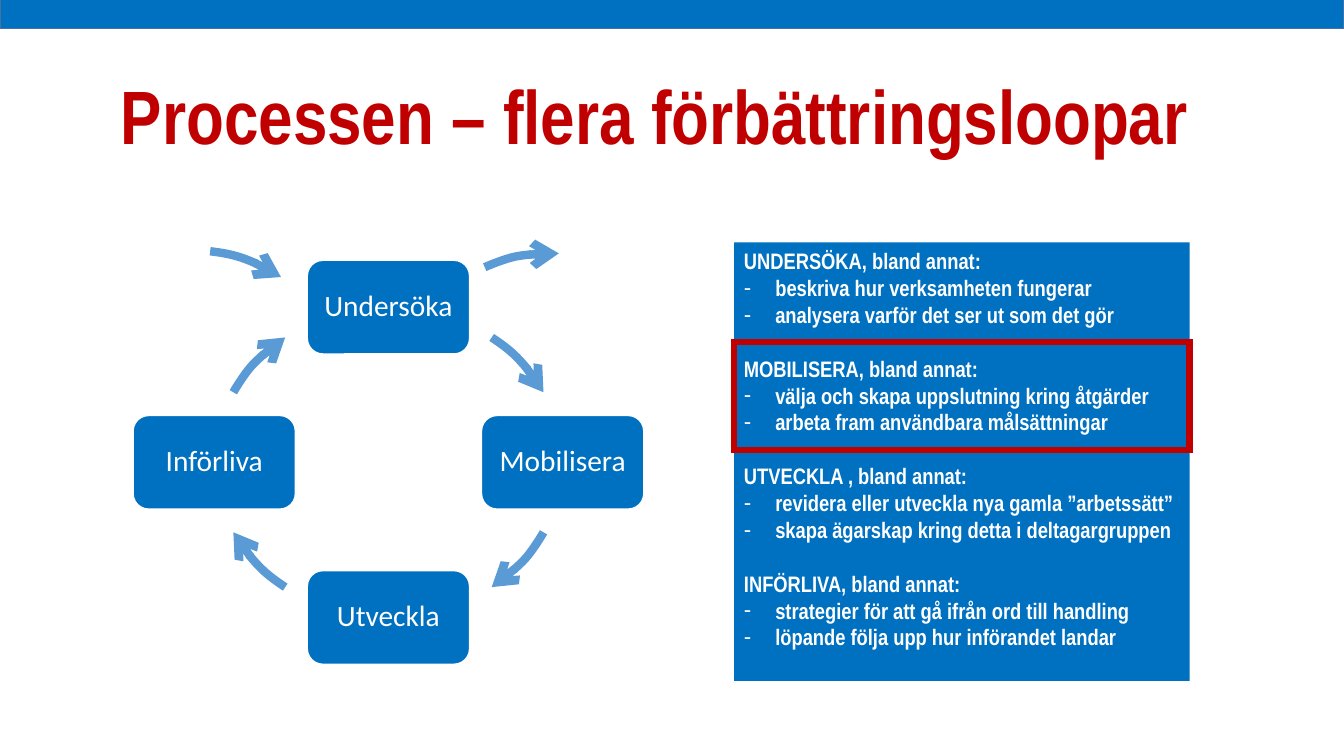
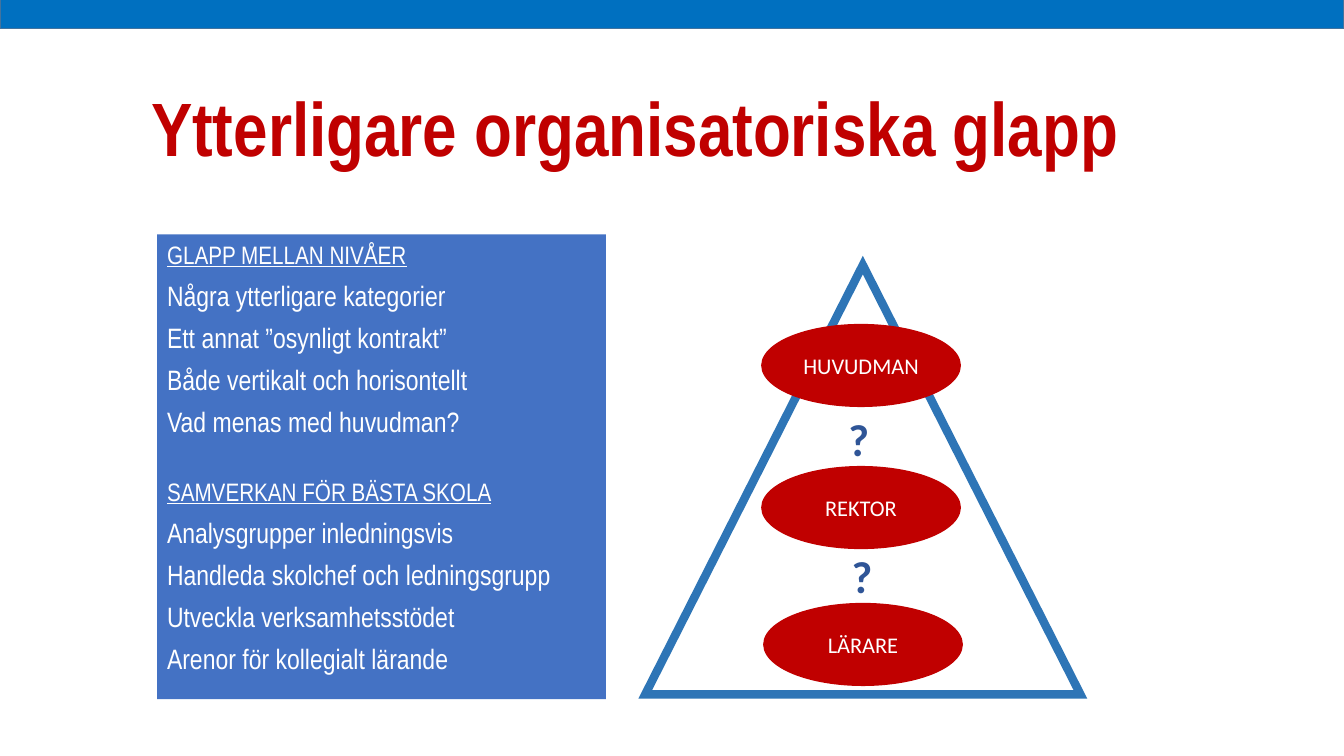
from lxml import etree
from pptx import Presentation
from pptx import util as u
from pptx.dml.color import RGBColor
from pptx.enum import shapes, text
from pptx.oxml.ns import qn

BLUE = RGBColor(0x00, 0x70, 0xC0)
BAND_EDGE = RGBColor(0x43, 0x73, 0x9E)
PANEL_BLUE = RGBColor(0x44, 0x72, 0xC4)
ARROW_BLUE = RGBColor(0x5B, 0x9B, 0xD5)
TRIANGLE_BLUE = RGBColor(0x2E, 0x75, 0xB6)
QUESTION_BLUE = RGBColor(0x2F, 0x55, 0x97)
RED = RGBColor(0xC0, 0x00, 0x00)
WHITE = RGBColor(0xFF, 0xFF, 0xFF)

Shape = shapes.MSO_SHAPE
WIDTH, HEIGHT = 33.87, 19.05
BAND = (0, -0.25, WIDTH, 0.97)
CYCLE_CENTRE = (9.79, 11.65)
NODE_SIZE = (4.09, 2.36)
NODE_STEP = (4.39, 3.91)
RING_SIZE = (8.76, 7.82)
ROLE_SIZE = (5, 2.06)

TITLE = {"name": "Arial Narrow", "size": u.Pt(54), "bold": True}
PHASE = {"name": "Arial Narrow", "size": u.Pt(16), "bold": True}
HEADING = {"name": "Arial Narrow", "size": u.Pt(18), "underline": True}
BODY = {"name": "Arial Narrow", "size": u.Pt(20)}
NODE = {"name": "Calibri", "size": u.Pt(21)}
ROLE = {"name": "Calibri", "size": u.Pt(16)}
QUESTION = {"name": "Calibri", "size": u.Pt(32), "bold": True}

PHASES = [
    ("UNDERSÖKA, bland annat:",
     ["beskriva hur verksamheten fungerar",
      "analysera varför det ser ut som det gör"]),
    ("MOBILISERA, bland annat:",
     ["välja och skapa uppslutning kring åtgärder",
      "arbeta fram användbara målsättningar"]),
    ("UTVECKLA , bland annat:",
     ["revidera eller utveckla nya gamla ”arbetssätt”",
      "skapa ägarskap kring detta i deltagargruppen"]),
    ("INFÖRLIVA, bland annat:",
     ["strategier för att gå ifrån ord till handling",
      "löpande följa upp hur införandet landar"]),
]
GAPS = [
    ("GLAPP MELLAN NIVÅER",
     ["Några ytterligare kategorier",
      "Ett annat ”osynligt kontrakt”",
      "Både vertikalt och horisontellt",
      "Vad menas med huvudman?"]),
    ("SAMVERKAN FÖR BÄSTA SKOLA",
     ["Analysgrupper inledningsvis",
      "Handleda skolchef och ledningsgrupp",
      "Utveckla verksamhetsstödet",
      "Arenor för kollegialt lärande"]),
]
NODES = [("Undersöka", 0, -1), ("Mobilisera", 1, 0),
         ("Utveckla", 0, 1), ("Införliva", -1, 0)]
UPPER_RIGHT, LOWER_RIGHT = (309.6, 335.7), (24.3, 50.4)
LOWER_LEFT, UPPER_LEFT = (129.6, 155.7), (204.3, 230.4)


def set_all(target, values):
    for name, value in values.items():
        setattr(target, name, value)


def write(paragraph, words, font, color, **layout):
    run = paragraph.add_run()
    run.text = words
    set_all(run.font, font)
    run.font.color.rgb = color
    set_all(paragraph, layout)


def paint(figure, fill=None, line=None, weight=1):
    figure.shadow.inherit = False
    if fill is None:
        figure.fill.background()
    else:
        figure.fill.solid()
        figure.fill.fore_color.rgb = fill
    if line is None:
        figure.line.fill.background()
    else:
        figure.line.color.rgb = line
        figure.line.width = u.Pt(weight)
        add_line_part(figure, "a:miter", "lim", "800000")


def add_line_part(figure, tag, name, value):
    outline = figure._element.spPr.find(qn("a:ln"))
    etree.SubElement(outline, qn(tag)).set(name, value)


def add_figure(slide, kind, box, **look):
    figure = slide.shapes.add_shape(kind, *map(u.Cm, box))
    paint(figure, **look)
    return figure


def add_label(figure, words, font, **layout):
    frame = figure.text_frame
    set_all(frame, {"word_wrap": True, "vertical_anchor": text.MSO_ANCHOR.MIDDLE})
    write(frame.paragraphs[0], words, font, WHITE,
          alignment=text.PP_ALIGN.CENTER, **layout)


def add_words(slide, words, box, font, color, wrap):
    frame = slide.shapes.add_textbox(*map(u.Cm, box)).text_frame
    frame.word_wrap = wrap
    write(frame.paragraphs[0], words, font, color)


def add_dash(paragraph):
    properties = paragraph._p.get_or_add_pPr()
    indent = u.Cm(0.79)
    properties.set("marL", str(indent))
    properties.set("indent", str(-indent))
    etree.SubElement(properties, qn("a:buFont")).set("typeface", "Arial")
    etree.SubElement(properties, qn("a:buChar")).set("char", "-")


def add_panel(slide, box, fill, groups, heading, body, spacing, group_gap, dashed):
    frame = add_figure(slide, Shape.RECTANGLE, box, fill=fill).text_frame
    set_all(frame, {"word_wrap": True, "vertical_anchor": text.MSO_ANCHOR.TOP})
    for number, (topic, points) in enumerate(groups):
        first = number == 0
        paragraph = frame.paragraphs[0] if first else frame.add_paragraph()
        write(paragraph, topic, heading, WHITE, alignment=text.PP_ALIGN.LEFT,
              space_before=u.Pt(0 if first else group_gap))
        for point in points:
            paragraph = frame.add_paragraph()
            write(paragraph, point, body, WHITE, alignment=text.PP_ALIGN.LEFT,
                  space_before=u.Pt(spacing))
            if dashed:
                add_dash(paragraph)


def add_curved_arrow(slide, left, top, angles, rotation=0):
    arrow = add_figure(slide, Shape.ARC, (left, top, *RING_SIZE),
                       line=ARROW_BLUE, weight=6)
    arrow.rotation = rotation
    for index, degrees in enumerate(angles):
        arrow.adjustments[index] = degrees * 0.6
    add_line_part(arrow, "a:tailEnd", "type", "arrow")


def add_cycle(slide):
    cx, cy = CYCLE_CENTRE
    width, height = NODE_SIZE
    for words, column, row in NODES:
        box = (cx + column * NODE_STEP[0] - width / 2,
               cy + row * NODE_STEP[1] - height / 2, width, height)
        node = add_figure(slide, Shape.ROUNDED_RECTANGLE, box, fill=BLUE, line=WHITE)
        for side in ("left", "top", "right", "bottom"):
            setattr(node.text_frame, f"margin_{side}", u.Cm(0.1))
        add_label(node, words, NODE, line_spacing=0.9)
    for angles in (UPPER_RIGHT, LOWER_RIGHT, LOWER_LEFT, UPPER_LEFT):
        add_curved_arrow(slide, cx - RING_SIZE[0] / 2, cy - RING_SIZE[1] / 2, angles)
    add_curved_arrow(slide, 9.96, 6.55, UPPER_LEFT, 36)
    add_curved_arrow(slide, 0, 6.4, UPPER_RIGHT, 333.4)


def add_slide(deck, title, left, top):
    slide = deck.slides.add_slide(deck.slide_layouts[6])
    add_figure(slide, Shape.RECTANGLE, BAND, fill=BLUE, line=BAND_EDGE)
    add_words(slide, title, (left, top, WIDTH - left, 2.21), TITLE, RED, True)
    return slide


def build_process(deck):
    slide = add_slide(deck, "Processen – flera förbättringsloopar", 2.8, 1.62)
    add_cycle(slide)
    add_panel(slide, (18.5, 6.11, 11.48, 11.05), BLUE, PHASES, PHASE, PHASE,
              spacing=0, group_gap=19.2, dashed=True)
    add_figure(slide, Shape.RECTANGLE, (18.5, 8.62, 11.48, 2.72),
               line=RED, weight=4.5)


def build_gaps(deck):
    slide = add_slide(deck, "Ytterligare organisatoriska glapp", 3.56, 1.91)
    add_panel(slide, (3.96, 5.91, 11.31, 11.71), PANEL_BLUE, GAPS, HEADING, BODY,
              spacing=6, group_gap=27.6, dashed=False)
    add_figure(slide, Shape.ISOSCELES_TRIANGLE, (16.26, 6.68, 10.97, 10.82),
               fill=WHITE, line=TRIANGLE_BLUE, weight=6)
    for words, left, top in (("HUVUDMAN", 19.2, 8.18), ("REKTOR", 19.2, 11.76),
                             ("LÄRARE", 19.25, 15.21)):
        role = add_figure(slide, Shape.OVAL, (left, top, *ROLE_SIZE),
                          fill=RED, line=RED)
        add_label(role, words, ROLE)
    for left, top in ((21.13, 10.26), (21.21, 13.71)):
        add_words(slide, "?", (left, top, 1.04, 1.63), QUESTION, QUESTION_BLUE, False)


def main():
    deck = Presentation()
    set_all(deck, {"slide_width": u.Cm(WIDTH), "slide_height": u.Cm(HEIGHT)})
    build_process(deck)
    build_gaps(deck)
    deck.save("out.pptx")


if __name__ == "__main__":
    main()
